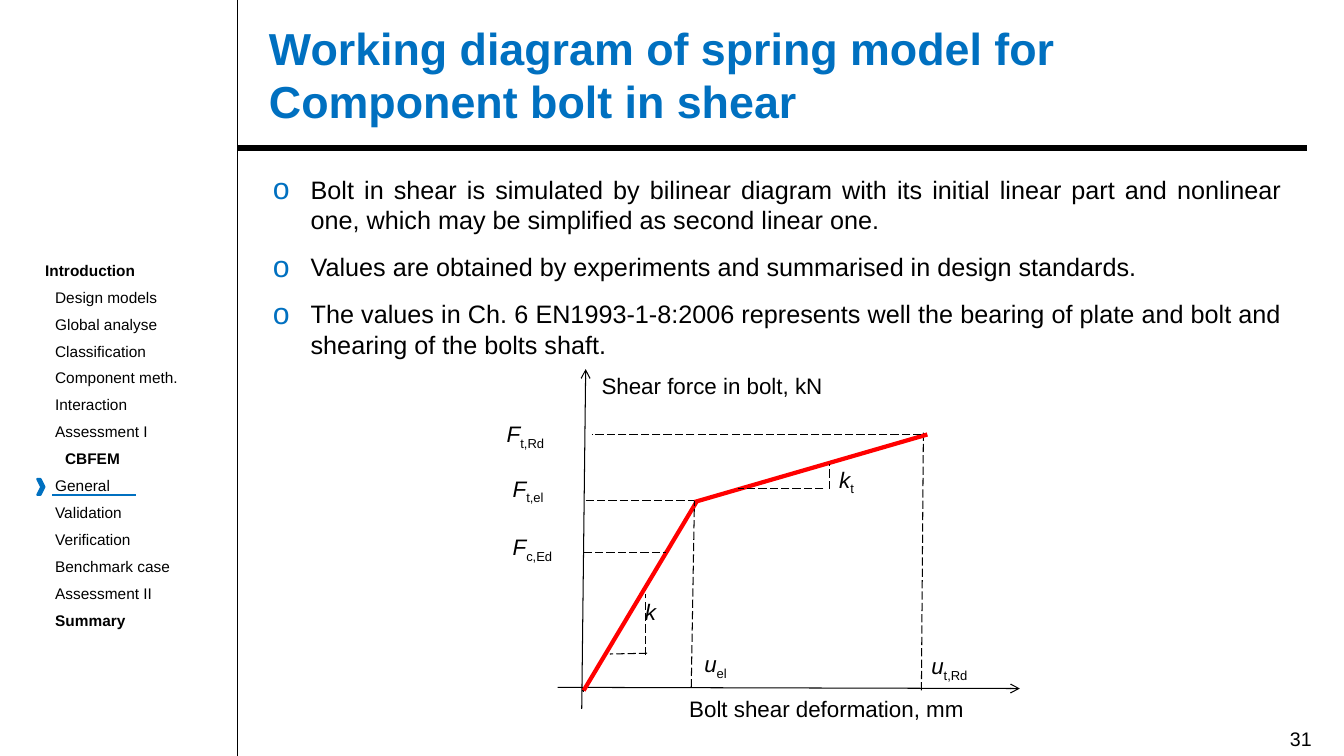
from dataclasses import dataclass

from lxml.etree import SubElement
from pptx import Presentation
from pptx.dml.color import RGBColor
from pptx.enum.dml import MSO_LINE
from pptx.enum.shapes import MSO_CONNECTOR
from pptx.enum.text import MSO_ANCHOR, PP_ALIGN
from pptx.oxml.ns import qn
from pptx.shapes.connector import Connector
from pptx.slide import Slide
from pptx.text.text import TextFrame, _Paragraph, _Run
from pptx.util import Cm, Pt

FONT = "Arial"
COLORS = {"black": "000000", "blue": "0070C0", "red": "FF0000"}
TITLE = "Working diagram of spring model for Component bolt in shear"
BULLETS = [
    "Bolt in shear is simulated by bilinear diagram with its initial linear part "
    "and nonlinear one, which may be simplified as second linear one.",
    "Values are obtained by experiments and summarised in design standards.",
    "The values in Ch. 6 EN1993-1-8:2006 represents well the bearing of plate "
    "and bolt and shearing of the bolts shaft.",
]


@dataclass
class MenuItem:
    text: str
    indent: float = 0.25
    bold: bool = False


@dataclass
class Line:
    """A line between two points, in centimetres."""
    x1: float
    y1: float
    x2: float
    y2: float
    color: str = "black"
    width: float = 0.75
    dashed: bool = False
    arrow: bool = False
    kind: MSO_CONNECTOR = MSO_CONNECTOR.STRAIGHT


@dataclass
class Label:
    """A diagram label: a plain caption, or a symbol with a subscript."""
    left: float
    top: float
    width: float
    caption: str = ""
    symbol: str = ""
    subscript: str = ""


MENU = [
    MenuItem("Introduction", 0, True),
    *map(MenuItem, ["Design models", "Global analyse", "Classification",
                    "Component meth.", "Interaction", "Assessment I"]),
    MenuItem("CBFEM", 0.5, True),
    *map(MenuItem, ["General", "Validation", "Verification",
                    "Benchmark case", "Assessment II"]),
    MenuItem("Summary", bold=True),
]
FRAME_LINES = [
    Line(5.99, 19.05, 5.99, 0),
    Line(5.99, 3.73, 32.94, 3.73, width=4.5),
]
DIAGRAM_LINES = [
    Line(23.22, 17.4, 23.27, 10.9, dashed=True),
    Line(14.66, 17.86, 14.76, 9.3, arrow=True),
    Line(14.05, 17.32, 25.7, 17.35, arrow=True),
    Line(14.66, 17.37, 14.71, 17.4, width=1.5, kind=MSO_CONNECTOR.ELBOW),
    Line(14.71, 17.4, 17.55, 12.65, "red", 3),
    Line(23.37, 10.95, 17.5, 12.65, "red", 3),
    Line(23.22, 10.95, 14.91, 10.95, dashed=True),
    Line(17.42, 17.32, 17.5, 12.62, dashed=True),
    Line(14.76, 12.62, 17.5, 12.62, dashed=True),
    Line(14.71, 13.92, 16.79, 13.92, dashed=True),
    Line(16.26, 16.51, 16.26, 14.96, dashed=True),
    Line(16.31, 16.46, 15.37, 16.48, dashed=True),
    Line(20.75, 12.32, 18.59, 12.32, dashed=True),
    Line(20.9, 12.32, 20.9, 11.68, dashed=True),
]
MENU_UNDERLINE = Line(1.32, 12.47, 3.43, 12.47, "blue", 1.5)
MARKER_POINTS = [(0.94, 12.07), (1.02, 12.07), (1.12, 12.27),
                 (1.02, 12.47), (0.94, 12.47), (1.04, 12.27)]
LABELS = [
    Label(14.91, 9.25, 12.34, caption="Shear force in bolt, kN"),
    Label(17.12, 17.4, 9.68, caption="Bolt shear deformation, mm"),
    Label(17.5, 16.26, 2.36, symbol="u", subscript="el"),
    Label(23.22, 16.31, 2.62, symbol="u", subscript="t,Rd"),
    Label(12.52, 10.46, 2.87, symbol="F", subscript="t,Rd"),
    Label(12.67, 11.84, 2.84, symbol="F", subscript="t,el"),
    Label(12.67, 13.31, 2.69, symbol="F", subscript="c,Ed"),
    Label(16, 14.96, 1.07, symbol="k"),
    Label(20.9, 11.61, 2.08, symbol="k", subscript="t"),
]


def rgb(name: str) -> RGBColor:
    return RGBColor.from_string(COLORS[name])


def add_text_frame(slide: Slide, left: float, top: float, width: float,
                   height: float) -> TextFrame:
    box = slide.shapes.add_textbox(Cm(left), Cm(top), Cm(width), Cm(height))
    box.text_frame.word_wrap = True
    return box.text_frame


def format_text(item: _Paragraph | _Run, size: float, color: str = "black",
                bold: bool = False, italic: bool = False) -> None:
    font = item.font
    font.name, font.size = FONT, Pt(size)
    font.bold, font.italic = bold, italic
    font.color.rgb = rgb(color)


def add_line(slide: Slide, line: Line) -> Connector:
    connector = slide.shapes.add_connector(
        line.kind, Cm(line.x1), Cm(line.y1), Cm(line.x2), Cm(line.y2))
    connector.line.color.rgb = rgb(line.color)
    connector.line.width = Pt(line.width)
    if line.dashed:
        connector.line.dash_style = MSO_LINE.LONG_DASH
    if line.arrow:
        SubElement(connector.line._get_or_add_ln(), qn("a:tailEnd"), type="arrow")
    SubElement(connector._element.spPr, qn("a:effectLst"))
    return connector


def add_label(slide: Slide, label: Label) -> None:
    frame = add_text_frame(slide, label.left, label.top, label.width, 1.24)
    paragraph = frame.paragraphs[0]
    paragraph.text = label.caption or label.symbol
    format_text(paragraph.runs[0], 16, italic=bool(label.symbol))
    if label.subscript:
        span = paragraph.add_run()
        span.text = label.subscript
        format_text(span, 16)
        span._r.get_or_add_rPr().set("baseline", "-25000")


def add_menu(slide: Slide) -> None:
    frame = add_text_frame(slide, 0.89, 6.45, 5.1, 10.08)
    frame.text = "\n".join(item.text for item in MENU)
    for number, (paragraph, item) in enumerate(zip(frame.paragraphs, MENU)):
        paragraph._p.get_or_add_pPr().set("marL", str(Cm(item.indent)))
        paragraph.space_before = Pt(6 if number else 0)
        format_text(paragraph.runs[0], 11, bold=item.bold)


def add_menu_marker(slide: Slide) -> None:
    """Draw the chevron and underline at the current menu entry."""
    points = [(Cm(x), Cm(y)) for x, y in MARKER_POINTS]
    builder = slide.shapes.build_freeform(*points[0])
    builder.add_line_segments(points[1:], close=True)
    chevron = builder.convert_to_shape()
    chevron.shadow.inherit = False
    chevron.fill.solid()
    chevron.fill.fore_color.rgb = rgb("blue")
    chevron.line.color.rgb = rgb("blue")
    chevron.line.width = Pt(1.5)
    add_line(slide, MENU_UNDERLINE)


def add_title(slide: Slide) -> None:
    frame = add_text_frame(slide, 6.53, 0.58, 26.01, 2.57)
    frame.vertical_anchor = MSO_ANCHOR.MIDDLE
    frame.text = TITLE
    format_text(frame.paragraphs[0].runs[0], 32, "blue", bold=True)


def add_bullets(slide: Slide) -> None:
    frame = add_text_frame(slide, 6.63, 4.27, 25.91, 5.16)
    frame.text = "\n".join(BULLETS)
    for number, paragraph in enumerate(frame.paragraphs):
        properties = paragraph._p.get_or_add_pPr()
        properties.set("marL", str(Cm(0.95)))
        properties.set("indent", str(-Cm(0.95)))
        bullet_color = SubElement(properties, qn("a:buClr"))
        SubElement(bullet_color, qn("a:srgbClr"), val=COLORS["blue"])
        SubElement(properties, qn("a:buSzPct"), val="120000")
        SubElement(properties, qn("a:buFont"), typeface=FONT)
        SubElement(properties, qn("a:buChar"), char="o")
        paragraph.alignment = PP_ALIGN.JUSTIFY
        paragraph.space_before = Pt(12 if number else 0)
        format_text(paragraph.runs[0], 18)


def add_page_number(slide: Slide) -> None:
    frame = add_text_frame(slide, 32.26, 18.19, 1.12, 0.86)
    frame.word_wrap = False
    frame.text = "31"
    format_text(frame.paragraphs[0].runs[0], 14)


def main() -> None:
    deck = Presentation()
    deck.slide_width, deck.slide_height = Cm(33.87), Cm(19.05)
    slide = deck.slides.add_slide(deck.slide_layouts[6])
    for line in FRAME_LINES:
        add_line(slide, line)
    add_menu(slide)
    add_page_number(slide)
    add_title(slide)
    add_bullets(slide)
    for line in DIAGRAM_LINES:
        add_line(slide, line)
    for label in LABELS:
        add_label(slide, label)
    add_menu_marker(slide)
    deck.save("out.pptx")


if __name__ == "__main__":
    main()
